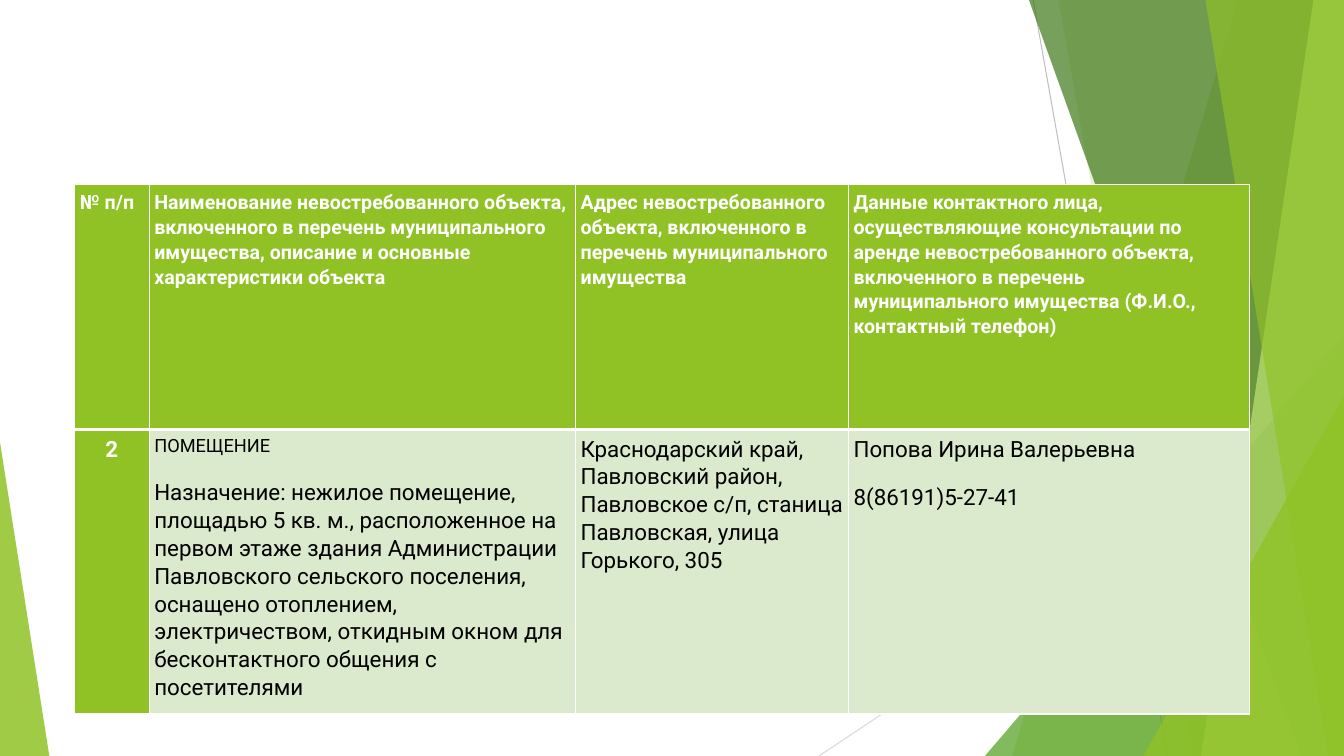
from dataclasses import dataclass
from lxml.etree import SubElement
from pptx import Presentation
from pptx.dml.color import RGBColor
from pptx.enum.shapes import MSO_CONNECTOR, MSO_SHAPE
from pptx.enum.text import PP_ALIGN
from pptx.oxml.ns import qn
from pptx.util import Pt

SCALE = 9525
WIDE, HIGH = 1280, 720


@dataclass(frozen=True)
class Theme:
    """Holds the colours and type sizes."""
    font: str = "Roboto"
    lime: str = "90C226"
    green: str = "54A021"
    dark: str = "3F7819"
    pale: str = "C0E474"
    tint: str = "DBE9CD"
    white: str = "FFFFFF"
    black: str = "000000"
    gray: str = "BFBFBF"
    mist: str = "D9D9D9"
    head: int = 14
    small: int = 13
    body: int = 16


THEME = Theme()
HEADS = (
    "№ п/п",
    "Наименование невостребованного объекта, включенного в перечень "
    "муниципального имущества, описание и основные характеристики объекта",
    "Адрес невостребованного объекта, включенного в перечень "
    "муниципального имущества",
    "Данные контактного лица, осуществляющие консультации по аренде "
    "невостребованного объекта, включенного в перечень муниципального "
    "имущества (Ф.И.О., контактный телефон)",
)
ROOM = (
    ("2",),
    ("ПОМЕЩЕНИЕ",
     "Назначение: нежилое помещение, площадью 5 кв. м., расположенное на "
     "первом этаже здания Администрации Павловского сельского поселения, "
     "оснащено отоплением, электричеством, откидным окном для "
     "бесконтактного общения с посетителями"),
    ("Краснодарский край, Павловский район, Павловское с/п, "
     "станица Павловская, улица Горького, 305",),
    ("Попова Ирина Валерьевна", "8(86191)5-27-41"),
)


def px(*sizes):
    """Turn pixel lengths into EMU."""
    return [size * SCALE for size in sizes]


def paint(shape, color, alpha):
    """Give a shape a see-through fill without outline or shadow."""
    shape.shadow.inherit = False
    shape.line.fill.background()
    shape.fill.solid()
    shape.fill.fore_color.rgb = RGBColor.from_string(color)
    tone = shape.fill._xPr.find(qn("a:solidFill"))[0]
    SubElement(tone, qn("a:alpha"), val=str(alpha * 1000))


def streak(slide, ends, color):
    """Draw a thin line between two points."""
    line = slide.shapes.add_connector(MSO_CONNECTOR.STRAIGHT, *px(*ends))
    line.line.color.rgb = RGBColor.from_string(color)
    line.line.width = Pt(0.75)
    SubElement(line._element.spPr, qn("a:effectLst"))


def band(slide, box, top, foot, color, alpha):
    """Draw a full-height band from a slanted left edge to the box's right."""
    left, y, width, height = box
    right, base = left + width, y + height
    pen = slide.shapes.build_freeform(left + top, y, scale=SCALE)
    pen.add_line_segments([(right, y), (right, base), (left + foot, base)])
    paint(pen.convert_to_shape(), color, alpha)


def wedge(slide, box, tip, color, alpha):
    """Draw a triangle whose tip lies at a share of its width."""
    shape = slide.shapes.add_shape(MSO_SHAPE.ISOSCELES_TRIANGLE, *px(*box))
    shape.adjustments[0] = tip
    paint(shape, color, alpha)


def decor(slide, box):
    """Place the green facets at both sides of the box."""
    x, y, width, height = box
    right, base = x + width, y + height
    streak(slide, (right - 296, y, right - 168, base), THEME.gray)
    streak(slide, (right, y + 387, right - 500, base), THEME.mist)
    side = (right - 320, y, 320, height)
    band(slide, side, 219, 4, THEME.lime, 30)
    band(slide, side, 48, 176, THEME.lime, 20)
    wedge(slide, (right - 342, base - 400, 342, 400), 1, THEME.green, 72)
    band(slide, side, 20, 279, THEME.dark, 70)
    band(slide, side, 291, 184, THEME.pale, 70)
    band(slide, side, 188, 305, THEME.lime, 65)
    wedge(slide, (right - 191, base - 343, 191, 343), 1, THEME.lime, 80)
    wedge(slide, (x, base - 299, 47, 299), 0, THEME.lime, 85)


def border(cell, top, foot):
    """Rule the four sides of a cell in white."""
    props = cell._tc.get_or_add_tcPr()
    for side, width in zip("LRTB", (1, 1, top, foot)):
        line = SubElement(props, qn(f"a:ln{side}"), w=str(Pt(width)))
        fill = SubElement(line, qn("a:solidFill"))
        SubElement(fill, qn("a:srgbClr"), val=THEME.white)


def write(cell, texts, sizes, color, bold):
    """Fill a cell with paragraphs."""
    cell.margin_left = cell.margin_right = 5 * SCALE
    cell.margin_top = cell.margin_bottom = 5 * SCALE
    frame = cell.text_frame
    frame.text = "\n".join(texts)
    for index, (part, size) in enumerate(zip(frame.paragraphs, sizes)):
        part.line_spacing = 1.07
        part.space_before = Pt(7.5 if index else 0)
        part.space_after = Pt(7.5)
        part.font.name = THEME.font
        part.font.size = Pt(size)
        part.font.bold = bold
        part.font.color.rgb = RGBColor.from_string(color)


def grid(slide, box):
    """Place the table of unclaimed property in the box."""
    x, y, width, height = box
    cols = (71, 406, 260, width - 737)
    rows = (233, height - 233)
    table = slide.shapes.add_table(2, 4, *px(x, y, width, height)).table
    for col, size in zip(table.columns, cols):
        col.width = size * SCALE
    for row, size in zip(table.rows, rows):
        row.height = size * SCALE
    for r, line in enumerate(([(head,) for head in HEADS], ROOM)):
        for c, texts in enumerate(line):
            cell = table.cell(r, c)
            key = r == 0 or c == 0
            border(cell, 3 if r else 1, 1 if r else 3)
            cell.fill.solid()
            cell.fill.fore_color.rgb = RGBColor.from_string(
                THEME.lime if key else THEME.tint)
            sizes = [THEME.body if r else THEME.head] * len(texts)
            if r and c == 1:
                sizes[0] = THEME.small
            write(cell, texts, sizes, THEME.white if key else THEME.black, key)
    table.cell(1, 0).text_frame.paragraphs[0].alignment = PP_ALIGN.CENTER


def main():
    """Build and save the slide."""
    deck = Presentation()
    deck.slide_width, deck.slide_height = px(WIDE, HIGH)
    slide = deck.slides.add_slide(deck.slide_layouts[6])
    decor(slide, (0, 0, WIDE, HIGH))
    grid(slide, (71, 176, 1119, 504))
    deck.save("out.pptx")


if __name__ == "__main__":
    main()
